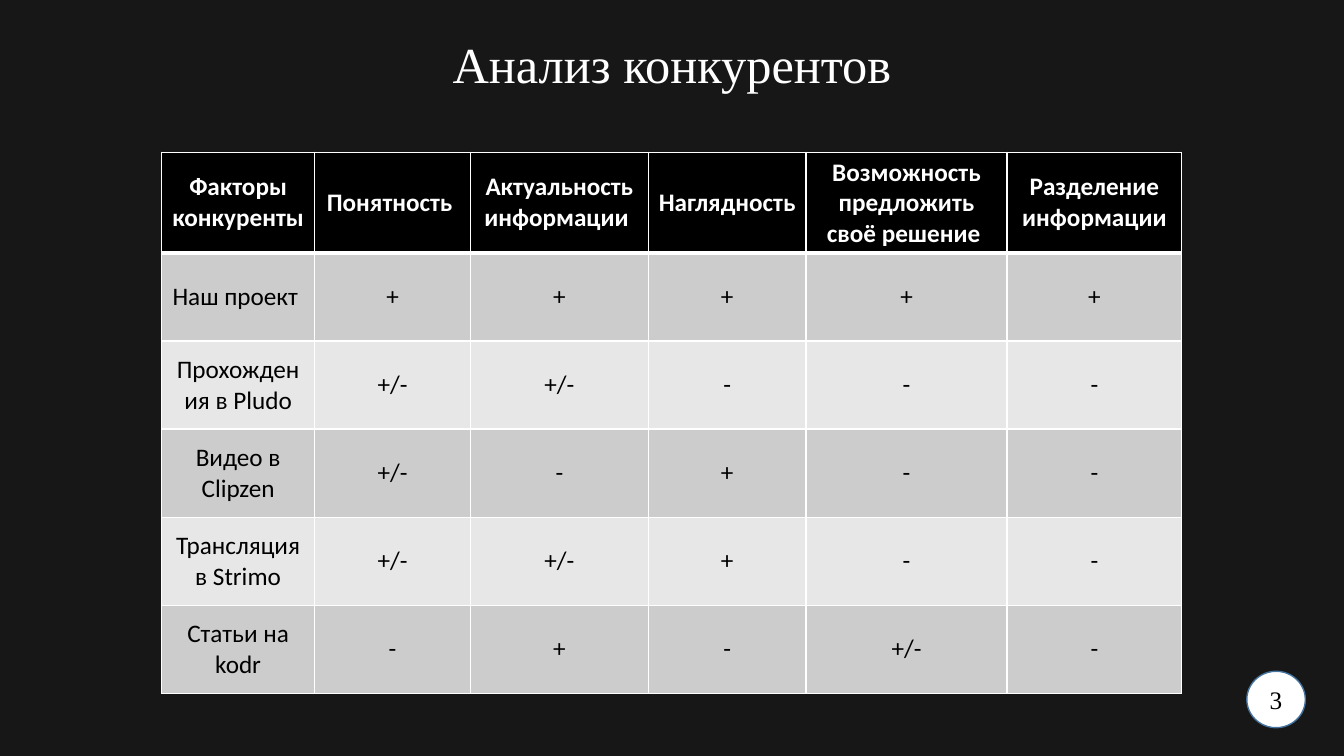
"""Build the competitor analysis slide with its comparison table."""
from dataclasses import dataclass
from lxml.etree import SubElement as Sub
from pptx import Presentation
from pptx.dml.color import RGBColor as RGB
from pptx.enum.shapes import MSO_SHAPE as Shape
from pptx.enum.text import MSO_ANCHOR as Anchor, PP_ALIGN as Align
from pptx.oxml.ns import qn
from pptx.util import Pt


@dataclass
class Theme:
    back: str = "181717"
    white: str = "FFFFFF"
    black: str = "000000"
    odd: str = "CCCCCC"
    even: str = "E7E7E7"
    ring: str = "43739E"
    serif: str = "Times New Roman"
    sans: str = "Calibri"
    title: int = 36
    body: int = 18


def write(frame, text, font, size, color, bold=False):
    para = frame.paragraphs[0]
    para.alignment = Align.CENTER
    run = para.add_run()
    run.text = text
    run.font.name = font
    run.font.size = Pt(size)
    run.font.bold = bold
    run.font.color.rgb = RGB.from_string(color)
    return para


def edge(cell, side, width, color):
    line = Sub(cell._tc.get_or_add_tcPr(), qn(f"a:ln{side}"), w=str(Pt(width)))
    Sub(Sub(line, qn("a:solidFill")), qn("a:srgbClr"), val=color)


theme = Theme()
deck = Presentation()
deck.slide_width, deck.slide_height = Pt(960), Pt(540)
slide = deck.slides.add_slide(deck.slide_layouts[6])
slide.background.fill.solid()
slide.background.fill.fore_color.rgb = RGB.from_string(theme.back)

title = slide.shapes.add_textbox(Pt(96), Pt(32.4), Pt(768), Pt(38.9)).text_frame
title.word_wrap = True
title.vertical_anchor = Anchor.BOTTOM
para = write(title, "Анализ конкурентов", theme.serif, theme.title, theme.white)
para.line_spacing = 0.9

rows = [
    ["Факторы конкуренты", "Понятность ", "Актуальность информации ",
     "Наглядность ", "Возможность предложить своё решение ",
     "Разделение информации"],
    ["Наш проект ", "+", "+", "+", "+", "+"],
    ["Прохождения в Pludo", "+/-", "+/-", "-", "-", "-"],
    ["Видео в Clipzen", "+/-", "-", "+", "-", "-"],
    ["Трансляция в Strimo", "+/-", "+/-", "+", "-", "-"],
    ["Статьи на kodr", "-", "+", "-", "+/-", "-"],
]
widths = [109.4, 111.2, 127.2, 112.6, 143.6, 124.9]
tall = 62.9
table = slide.shapes.add_table(len(rows), len(widths), Pt(115.4), Pt(108.7),
                               Pt(sum(widths)), Pt(tall * len(rows))).table
for col, width in zip(table.columns, widths):
    col.width = Pt(width)

for r, row in enumerate(rows):
    table.rows[r].height = Pt(tall)
    head = r == 0
    fill = theme.black if head else theme.odd if r % 2 else theme.even
    ink = theme.white if head else theme.black
    for c, text in enumerate(row):
        cell = table.cell(r, c)
        cell.vertical_anchor = Anchor.MIDDLE
        for side in "LRTB":
            thick = (r, side) in [(0, "B"), (1, "T")]
            edge(cell, side, 3 if thick else 1, theme.white)
        cell.fill.solid()
        cell.fill.fore_color.rgb = RGB.from_string(fill)
        write(cell.text_frame, text, theme.sans, theme.body, ink, head)

badge = slide.shapes.add_shape(Shape.OVAL, Pt(890.6), Pt(479.5), Pt(41.8), Pt(40.3))
badge.shadow.inherit = False
badge.fill.solid()
badge.fill.fore_color.rgb = RGB.from_string(theme.white)
badge.line.color.rgb = RGB.from_string(theme.ring)
badge.line.width = Pt(1)
badge.text_frame.vertical_anchor = Anchor.MIDDLE
write(badge.text_frame, "3", theme.serif, theme.body, theme.black)

deck.save("out.pptx")
